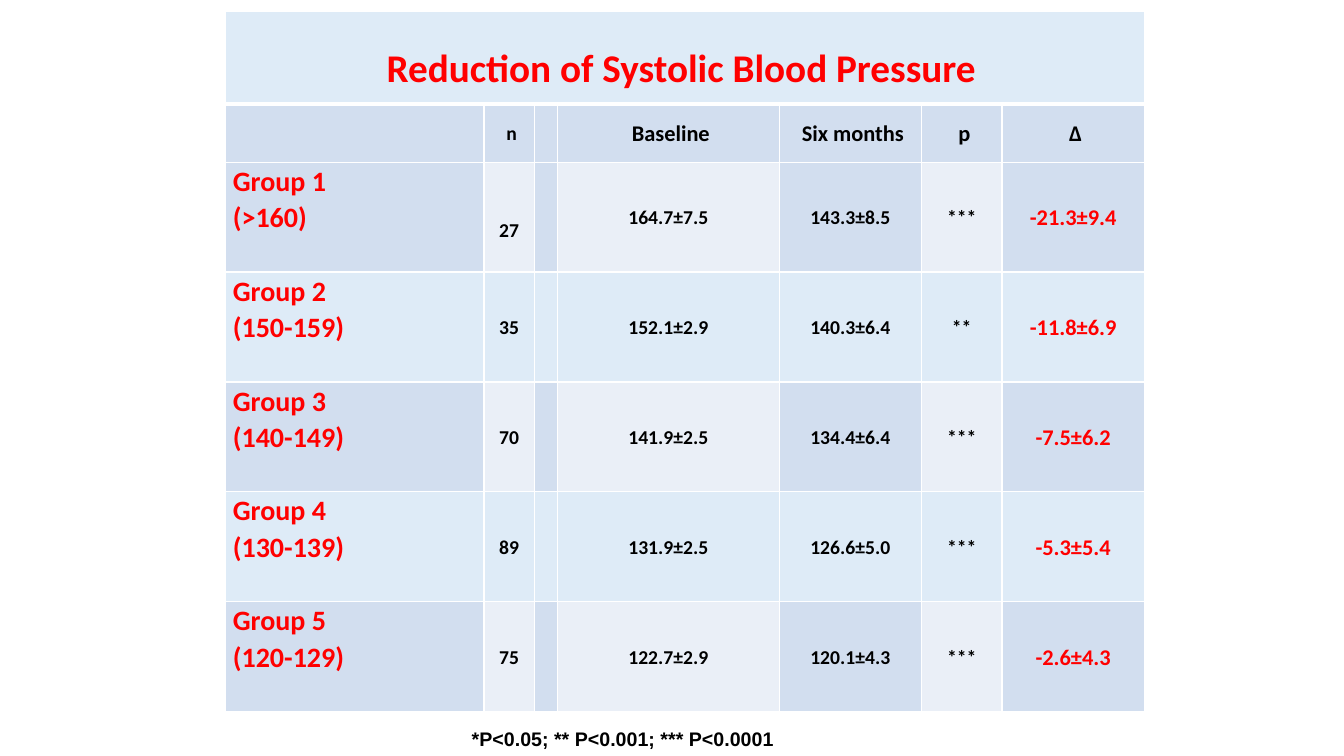
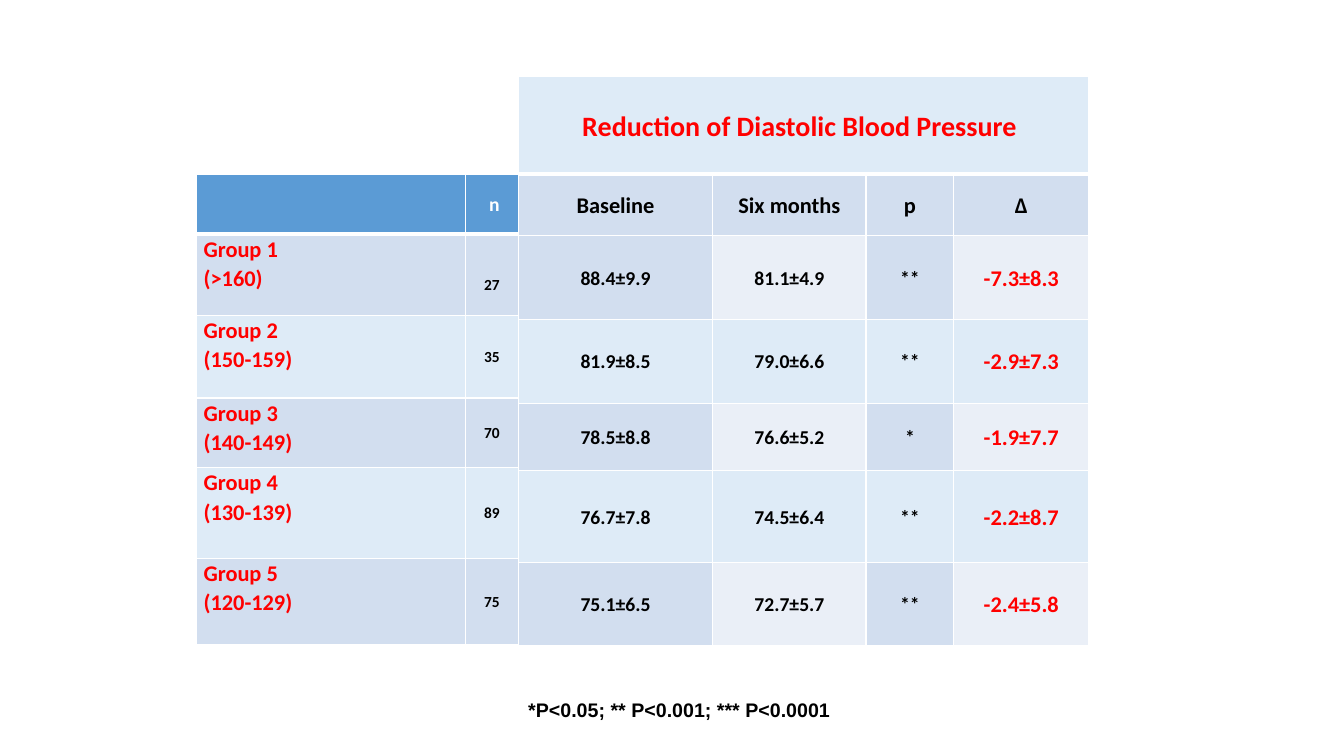
from dataclasses import dataclass

from lxml.etree import SubElement
from pptx import Presentation
from pptx.dml.color import RGBColor
from pptx.enum.text import MSO_ANCHOR, MSO_AUTO_SIZE, PP_ALIGN
from pptx.oxml.ns import qn
from pptx.util import Inches, Pt

# Shared colours, fonts and wording
WHITE = RGBColor(0xFF, 0xFF, 0xFF)
BLACK = RGBColor(0, 0, 0)
RED = RGBColor(0xFF, 0, 0)
BLUE = RGBColor(0x5B, 0x9B, 0xD5)
MID_BLUE = RGBColor(0xD2, 0xDE, 0xEF)
SOFT_BLUE = RGBColor(0xDE, 0xEB, 0xF7)
PALE_BLUE = RGBColor(0xEA, 0xEF, 0xF7)
TABLE_FONT = "Calibri"
NOTE_FONT = "Arial"
SIDE_MARGIN = 0.07
NOTE = "*P<0.05; ** P<0.001; *** P<0.0001"
GROUPS = ["Group 1\n(>160)", "Group 2\n(150-159)", "Group 3\n(140-149)",
          "Group 4\n(130-139)", "Group 5\n(120-129)"]
COUNTS = ["27", "35", "70", "89", "75"]


@dataclass
class Column:
    width: float
    header: str = ""
    values: tuple = ("",) * 5
    size: int = 14
    color: RGBColor = BLACK
    odd_fill: RGBColor = MID_BLUE
    header_size: int = 16
    is_label: bool = False
    first_drop: float = 0  # extra top margin above the first value


def write_text(frame, text, size=14, color=BLACK, font=TABLE_FONT,
               align=PP_ALIGN.CENTER, line_spacing=1.07):
    for index, line in enumerate(text.split("\n")):
        paragraph = frame.add_paragraph() if index else frame.paragraphs[0]
        paragraph.alignment = align
        paragraph.line_spacing = line_spacing
        run = paragraph.add_run()
        run.text = line
        run.font.name = font
        run.font.size = Pt(size)
        run.font.bold = True
        run.font.color.rgb = color


def set_borders(cell, bottom_width):
    properties = cell._tc.get_or_add_tcPr()
    for side in ("L", "R", "T", "B"):
        width = bottom_width if side == "B" else 1
        line = SubElement(properties, qn(f"a:ln{side}"), w=str(Pt(width)))
        fill = SubElement(line, qn("a:solidFill"))
        SubElement(fill, qn("a:srgbClr"), val=str(WHITE))


def format_cell(cell, fill, text="", left=SIDE_MARGIN, right=SIDE_MARGIN, top=0,
                bottom_border=1, anchor=MSO_ANCHOR.MIDDLE, **text_format):
    set_borders(cell, bottom_border)
    cell.fill.solid()
    cell.fill.fore_color.rgb = fill
    cell.margin_left, cell.margin_right = Inches(left), Inches(right)
    cell.margin_top, cell.margin_bottom = Inches(top), 0
    cell.vertical_anchor = anchor
    if text:
        write_text(cell.text_frame, text, **text_format)


def add_title_row(table, title, size, drop):
    cells = list(table.rows[0].cells)
    cells[0].merge(cells[-1])
    for cell in cells[1:]:
        format_cell(cell, SOFT_BLUE, bottom_border=3)
    format_cell(cells[0], SOFT_BLUE, title, right=0.15, top=drop,
                bottom_border=3, size=size, color=RED)


def add_group_table(slide, left, top, columns, heights, title="", title_size=20,
                    title_drop=0, header_fill=MID_BLUE, header_color=BLACK,
                    header_left=SIDE_MARGIN):
    """Draw an optional title row, a header row and one row per group."""
    frame = slide.shapes.add_table(
        len(heights), len(columns), Inches(left), Inches(top),
        Inches(sum(column.width for column in columns)), Inches(sum(heights)))
    table = frame.table
    table.first_row = table.horz_banding = False
    for row, height in zip(table.rows, heights):
        row.height = Inches(height)
    if title:
        add_title_row(table, title, title_size, title_drop)
    header_row = 1 if title else 0

    for index, column in enumerate(columns):
        table.columns[index].width = Inches(column.width)
        format_cell(table.cell(header_row, index), header_fill, column.header,
                    left=header_left, bottom_border=1 if title else 3,
                    size=column.header_size, color=header_color)
        for number, value in enumerate(column.values):
            format_cell(
                table.cell(header_row + 1 + number, index),
                SOFT_BLUE if number % 2 else column.odd_fill, value,
                top=0 if number else column.first_drop,
                anchor=MSO_ANCHOR.TOP if column.is_label else MSO_ANCHOR.MIDDLE,
                align=PP_ALIGN.LEFT if column.is_label else PP_ALIGN.CENTER,
                size=column.size, color=column.color)


def add_note(slide, left, top):
    box = slide.shapes.add_textbox(Inches(left), Inches(top), Inches(3.22), Inches(0.34))
    box.text_frame.word_wrap = False
    box.text_frame.auto_size = MSO_AUTO_SIZE.SHAPE_TO_FIT_TEXT
    write_text(box.text_frame, NOTE, font=NOTE_FONT, align=PP_ALIGN.LEFT, line_spacing=1)


def add_systolic_slide(presentation):
    slide = presentation.slides.add_slide(presentation.slide_layouts[6])
    columns = [
        Column(2.56, values=GROUPS, size=20, color=RED, is_label=True),
        Column(0.5, "n", COUNTS, odd_fill=PALE_BLUE, header_size=14, first_drop=0.25),
        Column(0.18),
        Column(2.2, "Baseline", odd_fill=PALE_BLUE, values=(
            "164.7±7.5", "152.1±2.9", "141.9±2.5", "131.9±2.5", "122.7±2.9")),
        Column(1.41, "Six months", (
            "143.3±8.5", "140.3±6.4", "134.4±6.4", "126.6±5.0", "120.1±4.3")),
        Column(0.8, "p", ("***", "**", "***", "***", "***"), odd_fill=PALE_BLUE),
        Column(1.41, "Δ", size=16, color=RED, values=(
            "-21.3±9.4", "-11.8±6.9", "-7.5±6.2", "-5.3±5.4", "-2.6±4.3")),
    ]
    add_group_table(slide, 2.24, 0.11, columns, [0.92, 0.58] + [1.09] * 5,
                    title="Reduction of Systolic Blood Pressure", title_size=28,
                    title_drop=0.2, header_left=0.12)
    add_note(slide, 4.58, 7.16)


def add_diastolic_slide(presentation):
    slide = presentation.slides.add_slide(presentation.slide_layouts[6])
    # Readings on the right
    readings = [
        Column(1.93, "Baseline", (
            "88.4±9.9", "81.9±8.5", "78.5±8.8", "76.7±7.8", "75.1±6.5")),
        Column(1.52, "Six months", odd_fill=PALE_BLUE, values=(
            "81.1±4.9", "79.0±6.6", "76.6±5.2", "74.5±6.4", "72.7±5.7")),
        Column(0.87, "p", ("**", "**", "*", "**", "**")),
        Column(1.34, "Δ", size=16, color=RED, odd_fill=PALE_BLUE, values=(
            "-7.3±8.3", "-2.9±7.3", "-1.9±7.7", "-2.2±8.7", "-2.4±5.8")),
    ]
    add_group_table(slide, 5.14, 0.76, readings,
                    [0.97, 0.61, 0.83, 0.83, 0.67, 0.91, 0.83],
                    title="Reduction of Diastolic Blood Pressure")
    # Group labels and sizes on the left
    labels = [
        Column(2.67, values=GROUPS, size=16, color=RED, is_label=True),
        Column(0.52, "n", COUNTS, size=11, header_size=14, first_drop=0.2),
    ]
    add_group_table(slide, 1.95, 1.73, labels, [0.59, 0.81, 0.82, 0.69, 0.9, 0.86],
                    header_fill=BLUE, header_color=WHITE, header_left=0.12)
    add_note(slide, 5.14, 6.87)


def main():
    presentation = Presentation()
    presentation.slide_width = Inches(13.33)
    presentation.slide_height = Inches(7.5)
    add_systolic_slide(presentation)
    add_diastolic_slide(presentation)
    presentation.save("out.pptx")


if __name__ == "__main__":
    main()
